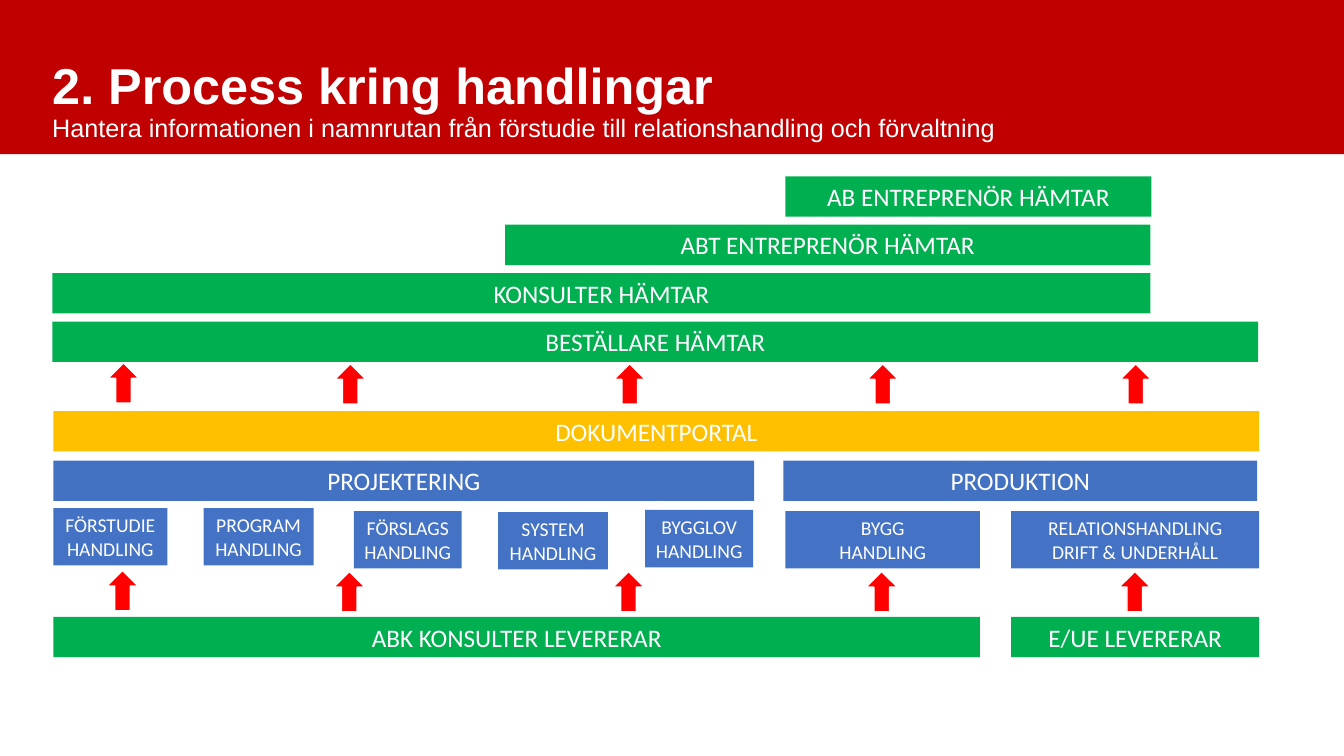
from pptx import Presentation
from pptx.dml.color import RGBColor
from pptx.enum.shapes import MSO_SHAPE
from pptx.enum.text import MSO_ANCHOR, PP_ALIGN
from pptx.util import Pt

RECTANGLE, UP_ARROW = MSO_SHAPE.RECTANGLE, MSO_SHAPE.UP_ARROW
MIDDLE, BOTTOM = MSO_ANCHOR.MIDDLE, MSO_ANCHOR.BOTTOM
LEFT, CENTER = PP_ALIGN.LEFT, PP_ALIGN.CENTER
PX = 9144
WHITE, DARK_RED, RED = "FFFFFF", "C00000", "FF0000"
GREEN, YELLOW, BLUE, PHASE_BLUE = "00B050", "FFC000", "4472C4", "4472C3"

prs = Presentation()
prs.slide_width, prs.slide_height = 1333 * PX, 750 * PX
slide = prs.slides.add_slide(prs.slide_layouts[6])


def add_block(kind, box, color):
    block = slide.shapes.add_shape(kind, *[value * PX for value in box])
    block.shadow.inherit = False
    block.fill.solid()
    block.fill.fore_color.rgb = RGBColor.from_string(color)
    block.line.fill.background()
    return block


def write(frame, text, sizes, font="Calibri", bold_first=False, align=CENTER,
          anchor=MIDDLE, wrap=False, spacing=1.0):
    frame.word_wrap = wrap
    frame.vertical_anchor = anchor
    for index, line in enumerate(text.split("\n")):
        paragraph = frame.paragraphs[0] if index == 0 else frame.add_paragraph()
        paragraph.text = line
        paragraph.alignment = align
        paragraph.line_spacing = spacing
        paragraph.font.name = font
        paragraph.font.size = Pt(sizes[min(index, len(sizes) - 1)])
        paragraph.font.bold = bold_first and index == 0
        paragraph.font.color.rgb = RGBColor.from_string(WHITE)


add_block(RECTANGLE, (0, 0, 1333, 153), DARK_RED)
heading = slide.shapes.add_textbox(42 * PX, 22 * PX, 1246 * PX, 120 * PX)
heading.text_frame.margin_bottom = 0
write(heading.text_frame,
      "2. Process kring handlingar\n"
      "Hantera informationen i namnrutan från förstudie till relationshandling och förvaltning",
      (36, 18), font="Arial", bold_first=True, align=LEFT, anchor=BOTTOM,
      wrap=True, spacing=0.9)

bars = [
    ("AB ENTREPRENÖR HÄMTAR", 779, 175, 363, GREEN),
    ("ABT ENTREPRENÖR HÄMTAR", 501, 223, 640, GREEN),
    ("KONSULTER HÄMTAR", 52, 271, 1089, GREEN),
    ("BESTÄLLARE HÄMTAR", 52, 319, 1196, GREEN),
    ("DOKUMENTPORTAL", 53, 408, 1196, YELLOW),
    ("PROJEKTERING", 53, 457, 695, PHASE_BLUE),
    ("PRODUKTION", 777, 457, 470, PHASE_BLUE),
    ("ABK KONSULTER LEVERERAR", 53, 612, 919, GREEN),
    ("E/UE LEVERERAR", 1003, 612, 246, GREEN),
]
for label, left, top, width, color in bars:
    write(add_block(RECTANGLE, (left, top, width, 40), color).text_frame, label, (18,))

documents = [
    ("FÖRSTUDIE\nHANDLING", 53, 504, 113),
    ("PROGRAM\nHANDLING", 202, 504, 109),
    ("FÖRSLAGS\nHANDLING", 351, 507, 107),
    ("SYSTEM\nHANDLING", 494, 508, 109),
    ("BYGGLOV\nHANDLING", 640, 506, 107),
    ("BYGG\nHANDLING", 779, 507, 193),
    ("RELATIONSHANDLING\nDRIFT & UNDERHÅLL", 1003, 507, 246),
]
for label, left, top, width in documents:
    write(add_block(RECTANGLE, (left, top, width, 57), BLUE).text_frame, label, (14,))

for row_top, shift in ((361, 0), (567, -1)):
    for left, rise in ((107, 1), (332, 0), (609, 0), (860, 0), (1111, 0)):
        arrow = add_block(UP_ARROW, (left + shift, row_top - rise, 31, 40), RED)
        arrow.line.color.rgb = RGBColor.from_string(WHITE)
        arrow.line.width = Pt(1)

prs.save("out.pptx")
